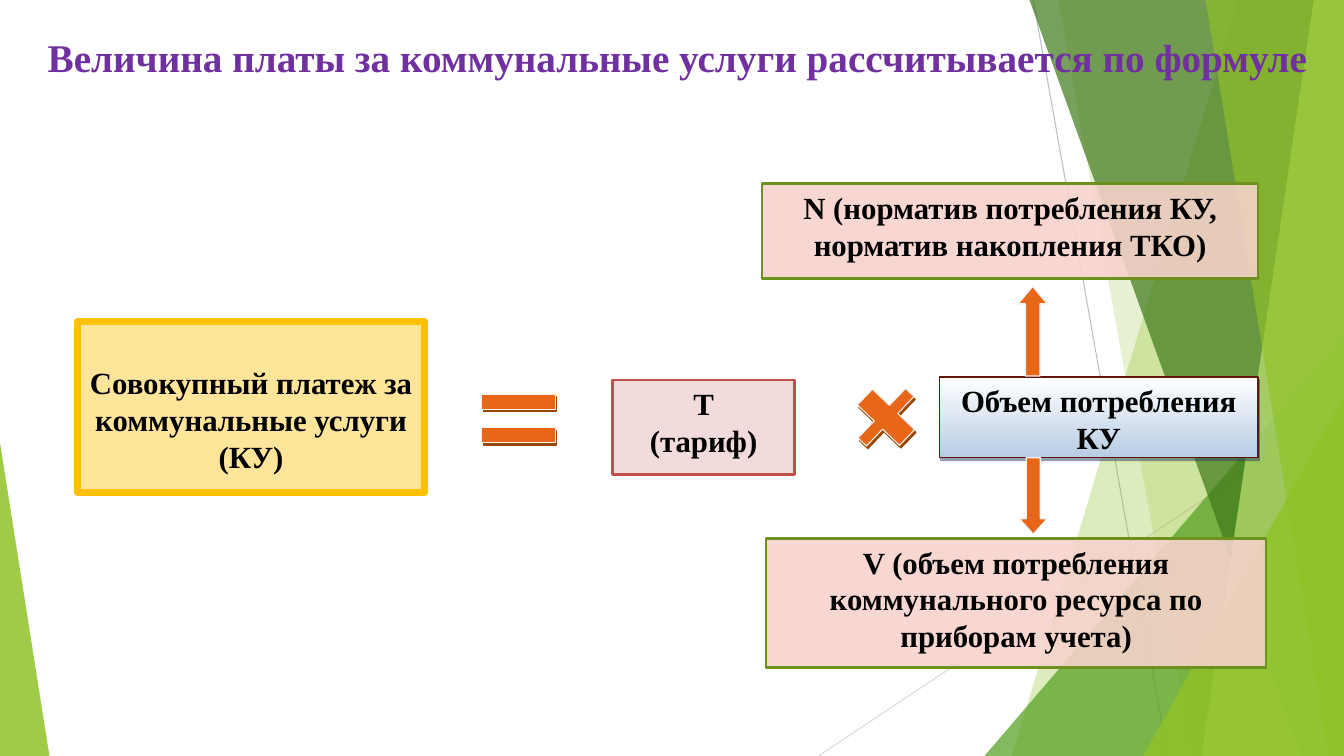
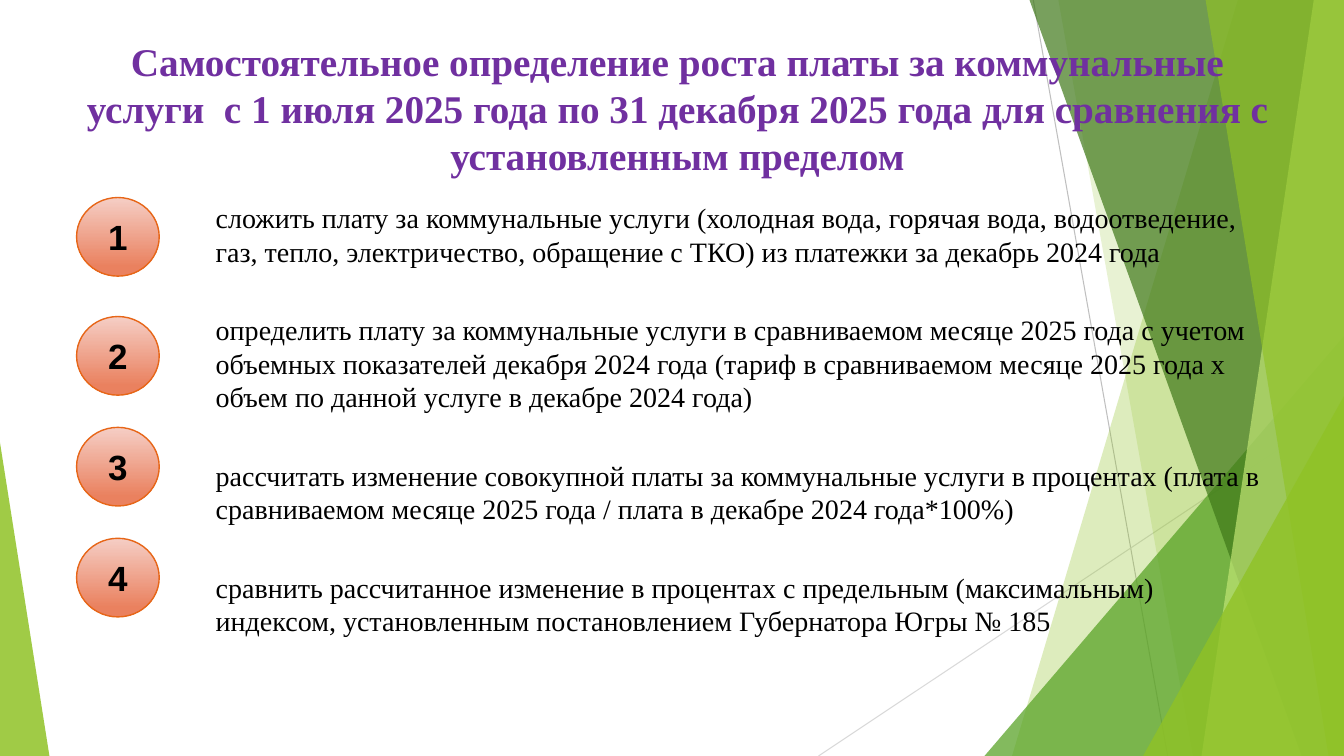
from pptx import Presentation
from pptx import util as u
from pptx.dml import color
from pptx.enum import shapes, text
from pptx.oxml import ns
from lxml import etree

WIDTH, HEIGHT = u.Inches(13.33), u.Inches(7.5)
SERIF, SANS = "Times New Roman", "Arial"
BLACK, PURPLE = "000000", "7030A0"
LIME, GREEN, DARK_GREEN, PALE_LIME = "90C226", "54A021", "3F7819", "C0E474"
ORANGE, BROWN, NAVY, SILVER = "E76618", "974706", "243F60", "F2F2F2"
PINK, OLIVE = "F8D2CC", "6C921D"
PRESET = shapes.MSO_SHAPE

FORMULA_TITLE = "Величина платы за коммунальные услуги рассчитывается по формуле"
GROWTH_TITLE = (
    "Самостоятельное определение роста платы за коммунальные услуги  с 1 июля 2025 года "
    "по 31 декабря 2025 года для сравнения с установленным пределом"
)
STEPS = [
    "сложить плату за коммунальные услуги (холодная вода, горячая вода, водоотведение, "
    "газ, тепло, электричество, обращение с ТКО) из платежки за декабрь 2024 года",
    "определить плату за коммунальные услуги в сравниваемом месяце 2025 года с учетом "
    "объемных показателей декабря 2024 года (тариф в сравниваемом месяце 2025 года х "
    "объем по данной услуге в декабре 2024 года)",
    "рассчитать изменение совокупной платы за коммунальные услуги в процентах (плата в "
    "сравниваемом месяце 2025 года / плата в декабре 2024 года*100%)",
    "сравнить рассчитанное изменение в процентах с предельным (максимальным) "
    "индексом, установленным постановлением Губернатора Югры № 185",
]
STEP_TOPS = [26.13, 41.87, 56.53, 71.2]


def across(percent):
    return round(WIDTH * percent / 100)


def down(percent):
    return round(HEIGHT * percent / 100)


def area(left, top, width, height):
    return across(left), down(top), across(width), down(height)


def rgb(value):
    return color.RGBColor.from_string(value)


def paint(shape, fill, opacity=100, line=None, weight=1):
    shape.shadow.inherit = False
    shape.fill.solid()
    shape.fill.fore_color.rgb = rgb(fill)
    if opacity < 100:
        tint = shape.element.spPr.find(ns.qn("a:solidFill"))[0]
        etree.SubElement(tint, ns.qn("a:alpha"), val=str(opacity * 1000))
    outline(shape, line, weight)


def outline(shape, line, weight):
    if line is None:
        shape.line.fill.background()
    else:
        shape.line.color.rgb = rgb(line)
        shape.line.width = u.Pt(weight)


def paint_gradient(shape, start, end, end_position, line):
    shape.shadow.inherit = False
    shape.fill.gradient()
    shape.fill.gradient_angle = 270
    for stop, value, position in zip(shape.fill.gradient_stops, (start, end), (0, end_position)):
        stop.color.rgb = rgb(value)
        stop.position = position
    outline(shape, line, 1)


def cast_shadow(shape, value, opacity=100):
    effects = shape.element.spPr.find(ns.qn("a:effectLst"))
    shadow = etree.SubElement(effects, ns.qn("a:outerShdw"), blurRad="0",
                              dist=str(u.Pt(2.2)), dir=str(63 * 60000), rotWithShape="0")
    tint = etree.SubElement(shadow, ns.qn("a:srgbClr"), val=value)
    etree.SubElement(tint, ns.qn("a:alpha"), val=str(opacity * 1000))


def write(shape, words, size, value=BLACK, bold=True, font=SERIF,
          align=text.PP_ALIGN.CENTER, anchor=text.MSO_ANCHOR.TOP):
    frame = shape.text_frame
    frame.text = words
    frame.word_wrap = True
    frame.auto_size = text.MSO_AUTO_SIZE.NONE
    frame.vertical_anchor = anchor
    for paragraph in frame.paragraphs:
        paragraph.alignment = align
        for run in paragraph.runs:
            run.font.name = font
            run.font.size = u.Pt(size)
            run.font.bold = bold
            run.font.color.rgb = rgb(value)


def place(shape, *box):
    shape.left, shape.top, shape.width, shape.height = area(*box)


def add_title(slide, words, *box):
    place(slide.shapes.title, *box)
    write(slide.shapes.title, words, 28, PURPLE)


def add_preset(slide, preset, box, adjustments=()):
    shape = slide.shapes.add_shape(preset, *area(*box))
    for index, value in enumerate(adjustments):
        shape.adjustments[index] = value
    return shape


def add_box(slide, words, box, fill, line, opacity=100, weight=2):
    shape = add_preset(slide, PRESET.RECTANGLE, box)
    paint(shape, fill, opacity, line, weight)
    write(shape, words, 22)
    return shape


def add_sign(slide, preset, box, adjustments=(), weight=0.75):
    shape = add_preset(slide, preset, box, adjustments)
    paint(shape, ORANGE, line=SILVER, weight=weight)
    return shape


def add_ray(slide, start, end, value):
    line = slide.shapes.add_connector(
        shapes.MSO_CONNECTOR.STRAIGHT, across(start[0]), down(start[1]), across(end[0]), down(end[1]))
    line.line.color.rgb = rgb(value)
    line.line.width = u.Pt(0.75)
    etree.SubElement(line.element.spPr, ns.qn("a:effectLst"))
    return line


def add_band(slide, top_left, bottom_left, fill, opacity):
    builder = slide.shapes.build_freeform(across(top_left), 0)
    builder.add_line_segments([(WIDTH, 0), (WIDTH, HEIGHT), (across(bottom_left), HEIGHT)])
    band = builder.convert_to_shape()
    paint(band, fill, opacity)
    return band


def add_corner(slide, left, top, width, tip, fill, opacity):
    corner = add_preset(slide, PRESET.ISOSCELES_TRIANGLE, (left, top, width, 100 - top), [tip])
    paint(corner, fill, opacity)
    return corner


def build_backdrop(presentation, slide):
    pieces = [
        add_ray(slide, (76.88, 0), (86.88, 100), "BFBFBF"),
        add_ray(slide, (100, 53.7), (60.9, 100), "D9D9D9"),
        add_band(slide, 92.1, 75.3, LIME, 30),
        add_band(slide, 78.75, 88.75, LIME, 20),
        add_corner(slide, 73.25, 44.45, 26.75, 1, GREEN, 72),
        add_band(slide, 76.6, 96.85, DARK_GREEN, 70),
        add_band(slide, 97.75, 89.4, PALE_LIME, 70),
        add_band(slide, 89.7, 98.85, LIME, 65),
        add_corner(slide, 85.05, 52.4, 14.95, 1, LIME, 80),
        add_corner(slide, 0, 58.53, 3.68, 0, LIME, 85),
    ]
    tree = presentation.slide_master.shapes.element
    for index, piece in enumerate(pieces, start=2):
        tree.insert(index, piece.element)


def build_formula(slide):
    add_title(slide, FORMULA_TITLE, 2.55, 3.73, 95.7, 16.27)
    payment = add_box(slide, "Совокупный платеж за коммунальные услуги (КУ)",
                      (5.78, 42.53, 25.8, 22.67), "FFC000", "FFC000", 40, 5)
    payment.text_frame.margin_top = down(5.6)
    add_box(slide, "Т\n(тариф)", (45.6, 50.27, 13.5, 12.53), "F2DBDB", "C0504D")

    times = add_sign(slide, PRESET.CROSS, (63.75, 50.67, 4.35, 9.07), [0.4])
    times.rotation = 43.9
    bars = [add_sign(slide, PRESET.RECTANGLE, (35.85, top, 5.48, 2)) for top in (52.13, 56.53)]
    for sign in (times, *bars):
        cast_shadow(sign, BROWN)

    add_box(slide, "N (норматив потребления КУ, норматив накопления ТКО)",
            (56.7, 24.27, 36.9, 12.53), PINK, OLIVE, 88)
    add_box(slide, "V (объем потребления коммунального ресурса по приборам учета)",
            (57, 71.2, 37.2, 17.07), PINK, OLIVE, 88)
    volume = add_preset(slide, PRESET.RECTANGLE, (69.9, 49.87, 23.7, 10.67))
    paint_gradient(volume, "FFFFFF", "B8CCE4", 1, "62170D")
    cast_shadow(volume, NAVY, 50)
    write(volume, "Объем потребления КУ", 22)
    add_sign(slide, PRESET.UP_ARROW, (75.75, 37.87, 2.18, 11.87), [0.5, 0.6], 1)
    add_sign(slide, PRESET.DOWN_ARROW, (75.83, 60.53, 2.1, 10.13), [0.5, 0.55], 1)


def add_steps(slide):
    body = slide.placeholders[1]
    place(body, 15.3, 25.87, 79.8, 58.67)
    write(body, "\n".join(STEPS), 20, bold=False, align=text.PP_ALIGN.LEFT)
    for paragraph in body.text_frame.paragraphs:
        paragraph.space_before = u.Pt(0)
        paragraph.space_after = u.Pt(32)
        properties = paragraph._p.get_or_add_pPr()
        properties.set("marL", "0")
        properties.set("indent", "0")
        etree.SubElement(properties, ns.qn("a:buNone"))


def add_badge(slide, number, top):
    badge = add_preset(slide, PRESET.OVAL, (5.7, top, 6.15, 10.4))
    paint_gradient(badge, "F5CEC5", "EA815F", 0.88, ORANGE)
    write(badge, str(number), 25, font=SANS, anchor=text.MSO_ANCHOR.MIDDLE)


def build_growth(slide):
    add_title(slide, GROWTH_TITLE, 5.7, 4.27, 89.4, 22)
    add_steps(slide)
    for number, top in enumerate(STEP_TOPS, start=1):
        add_badge(slide, number, top)


def main():
    presentation = Presentation()
    presentation.slide_width, presentation.slide_height = WIDTH, HEIGHT
    formula = presentation.slides.add_slide(presentation.slide_layouts[5])
    growth = presentation.slides.add_slide(presentation.slide_layouts[1])
    build_backdrop(presentation, formula)
    build_formula(formula)
    build_growth(growth)
    presentation.save("out.pptx")


if __name__ == "__main__":
    main()
